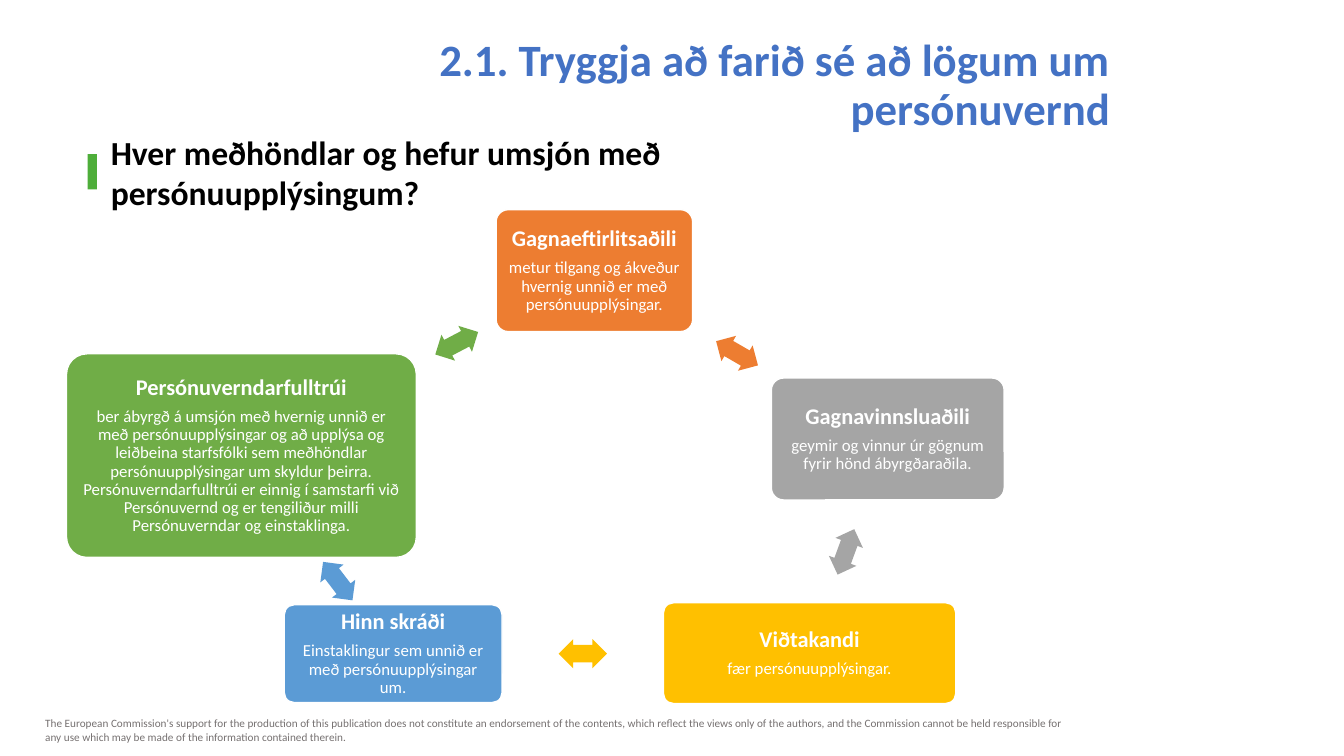
"""Build the slide on who handles and oversees personal data."""
import pptx
import pptx.dml.color
import pptx.enum.shapes
import pptx.enum.text
import pptx.util
from pptx.util import Inches

THEME = {
    "font": "Calibri",
    "title": "4472C4", "question": "000000", "footer": "767171",
    "marker": "4EAE3A", "light": "FFFFFF",
    "orange": "ED7D31", "grey": "A5A5A5", "yellow": "FFC000",
    "blue": "5B9BD5", "green": "70AD47",
    "title_size": 32, "question_size": 24, "footer_size": 8,
    "role_size": 16, "duty_size": 12,
}
SHAPE = pptx.enum.shapes.MSO_SHAPE
ALIGN = pptx.enum.text.PP_ALIGN
ANCHOR = pptx.enum.text.MSO_ANCHOR

deck = pptx.Presentation()
deck.slide_width, deck.slide_height = Inches(13.33), Inches(7.5)
page = deck.slides.add_slide(deck.slide_layouts[6])


def style_text(para, text, size, color, bold=False, align=ALIGN.LEFT, spacing=1.0):
    para.text = text
    para.alignment = align
    para.line_spacing = spacing
    para.font.name = THEME["font"]
    para.font.size = pptx.util.Pt(THEME[size])
    para.font.bold = bold
    para.font.color.rgb = pptx.dml.color.RGBColor.from_string(THEME[color])


def add_filled(kind, place, color):
    shape = page.shapes.add_shape(kind, *map(Inches, place))
    shape.shadow.inherit = False
    shape.fill.solid()
    shape.fill.fore_color.rgb = pptx.dml.color.RGBColor.from_string(THEME[color])
    shape.line.fill.background()
    return shape


add_filled(SHAPE.RECTANGLE, (0.87, 1.53, 0.09, 0.35), "marker")

captions = [
    ((0.35, 7.06, 10.46, 0.37), ANCHOR.TOP,
     "The European Commission's support for the production of this publication does not "
     "constitute an endorsement of the contents, which reflect the views only of the authors, "
     "and the Commission cannot be held responsible for any use which may be made of the "
     "information contained therein.",
     "footer", False, ALIGN.LEFT, 1.0),
    ((1, 1.25, 6.41, 0.91), ANCHOR.MIDDLE,
     "Hver meðhöndlar og hefur umsjón með persónuupplýsingum?",
     "question", True, ALIGN.LEFT, 1.0),
    ((2.33, 0.33, 8.78, 0.42), ANCHOR.TOP,
     "2.1. Tryggja að farið sé að lögum um persónuvernd",
     "title", True, ALIGN.RIGHT, 0.9),
]
for place, anchor, text, role, bold, align, spacing in captions:
    box = page.shapes.add_textbox(*map(Inches, place))
    box.text_frame.word_wrap = True
    box.text_frame.vertical_anchor = anchor
    style_text(box.text_frame.paragraphs[0], text, f"{role}_size", role, bold, align, spacing)

parties = [
    ("orange", (4.92, 2.08, 1.95, 1.21), (7.07, 3.36), 30, "Gagnaeftirlitsaðili",
     "metur tilgang og ákveður hvernig unnið er með persónuupplýsingar."),
    ("grey", (7.65, 3.75, 2.31, 1.21), (8.15, 5.33), 110.1, "Gagnavinnsluaðili",
     "geymir og vinnur úr gögnum fyrir hönd ábyrgðaraðila."),
    ("yellow", (6.58, 5.98, 2.9, 1), (5.54, 6.34), 180, "Viðtakandi",
     "fær persónuupplýsingar."),
    ("blue", (2.82, 6, 2.16, 0.97), (3.11, 5.62), 232.6, "Hinn skráði",
     "Einstaklingur sem unnið er með persónuupplýsingar um."),
    ("green", (0.66, 3.51, 3.47, 2.02), (4.29, 3.26), 332.3, "Persónuverndarfulltrúi",
     "ber ábyrgð á umsjón með hvernig unnið er með persónuupplýsingar og að upplýsa og "
     "leiðbeina starfsfólki sem meðhöndlar persónuupplýsingar um skyldur þeirra. "
     "Persónuverndarfulltrúi er einnig í samstarfi við Persónuvernd og er tengiliður milli "
     "Persónuverndar og einstaklinga."),
]
for color, place, arrow_corner, angle, party, duty in parties:
    card = add_filled(SHAPE.ROUNDED_RECTANGLE, place, color)
    card.adjustments[0] = 0.1
    card.line.color.rgb = pptx.dml.color.RGBColor.from_string(THEME["light"])
    card.line.width = pptx.util.Pt(1)
    frame = card.text_frame
    frame.word_wrap = True
    frame.vertical_anchor = ANCHOR.MIDDLE
    frame.margin_left = frame.margin_right = Inches(0.07)
    frame.margin_top = frame.margin_bottom = Inches(0.07)
    heading = frame.paragraphs[0]
    style_text(heading, party, "role_size", "light", True, ALIGN.CENTER, 0.9)
    heading.space_after = pptx.util.Pt(5.6)
    style_text(frame.add_paragraph(), duty, "duty_size", "light", False, ALIGN.CENTER, 0.9)

    arrow = add_filled(SHAPE.LEFT_RIGHT_ARROW, (*arrow_corner, 0.48, 0.29), color)
    arrow.adjustments[0] = 0.6
    arrow.adjustments[1] = 0.5
    arrow.rotation = angle

deck.save("out.pptx")
